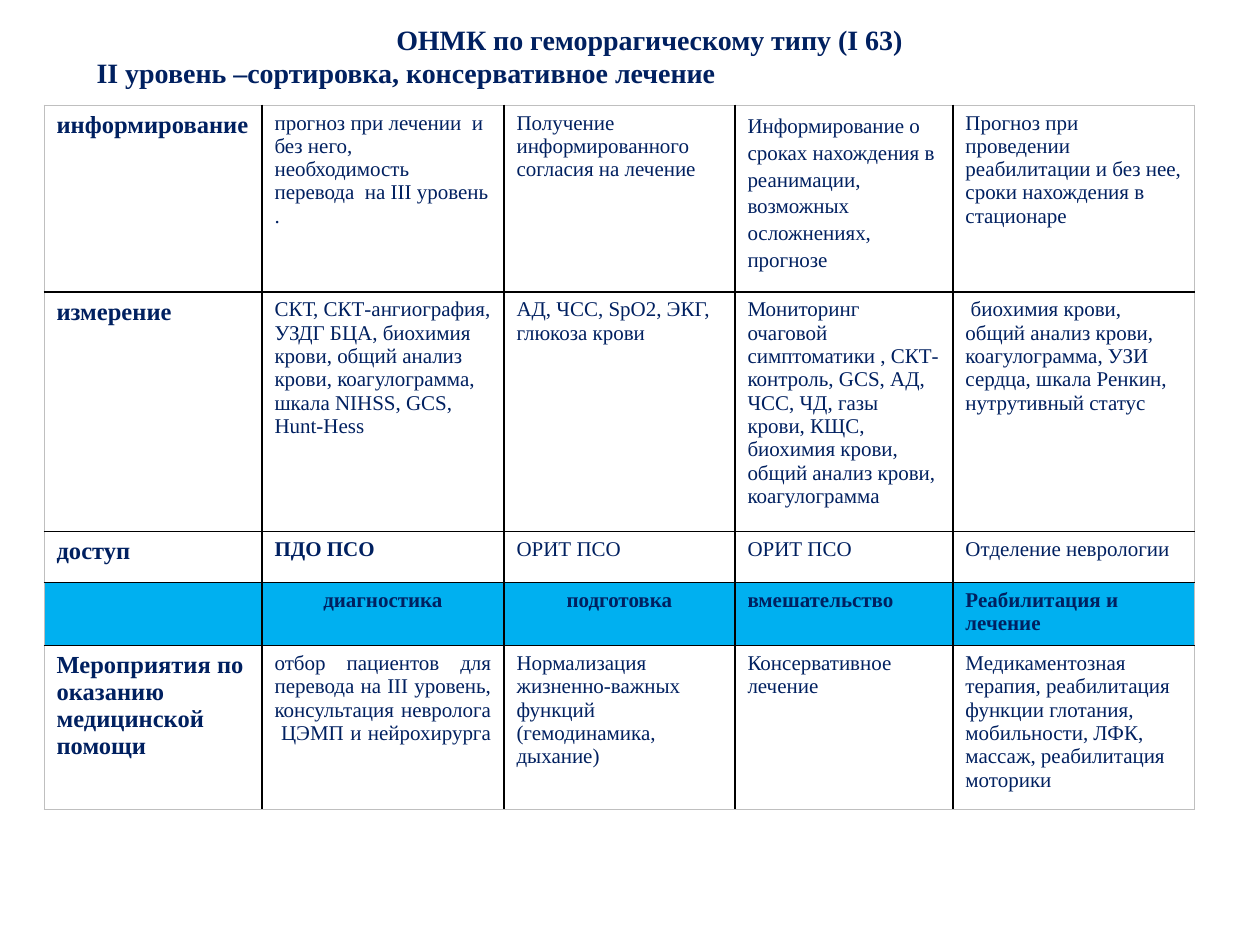
from dataclasses import dataclass

from lxml.etree import SubElement
from pptx import Presentation
from pptx.dml.color import RGBColor
from pptx.enum.text import MSO_ANCHOR, MSO_AUTO_SIZE, PP_ALIGN as Align
from pptx.oxml.ns import qn
from pptx.util import Emu, Pt

PX_PER_INCH = 126


@dataclass(frozen=True)
class Theme:
    font: str = "Times New Roman"
    ink: str = "002060"
    band: str = "00B0F0"
    grid: str = "000000"
    frame: str = "BFBFBF"
    title_size: int = 16
    label_size: int = 14
    body_size: int = 12
    grid_width: float = 1
    frame_width: float = 0.5


@dataclass(frozen=True)
class Entry:
    text: str
    bold: bool = False
    align: Align = Align.LEFT
    line_spacing: float = 1.0
    space_after: int = 0


@dataclass(frozen=True)
class Row:
    height: int
    label: str
    entries: tuple[Entry, ...]
    banded: bool = False


THEME = Theme()
COLUMN_WIDTHS = (218, 242, 231, 218, 242)
TITLE_LINES = (
    ("ОНМК по геморрагическому типу (I 63)", Align.CENTER),
    ("II уровень –сортировка, консервативное лечение", Align.LEFT),
)
ROWS = (
    Row(187, "информирование", (
        Entry("прогноз при лечении  и без него, необходимость перевода  на III уровень ."),
        Entry("Получение информированного согласия на лечение"),
        Entry("Информирование о сроках нахождения в реанимации, возможных осложнениях, прогнозе",
              line_spacing=1.15, space_after=10),
        Entry("Прогноз при проведении реабилитации и без нее, сроки нахождения в стационаре"),
    )),
    Row(239, "измерение", (
        Entry("СКТ, СКТ-ангиография, УЗДГ БЦА, биохимия крови, общий анализ крови, "
              "коагулограмма, шкала NIHSS, GCS, Hunt-Hess"),
        Entry("АД, ЧСС, SpO2, ЭКГ, глюкоза крови"),
        Entry("Мониторинг очаговой симптоматики , СКТ-контроль, GCS, АД, ЧСС, ЧД, газы крови, "
              "КЩС, биохимия крови, общий анализ крови, коагулограмма"),
        Entry(" биохимия крови, общий анализ крови, коагулограмма, УЗИ сердца, шкала Ренкин, "
              "нутрутивный статус"),
    )),
    Row(51, "доступ", (
        Entry("ПДО ПСО", bold=True),
        Entry("ОРИТ ПСО"),
        Entry("ОРИТ ПСО"),
        Entry("Отделение неврологии"),
    )),
    Row(63, "", (
        Entry("диагностика", bold=True, align=Align.CENTER),
        Entry("подготовка", bold=True, align=Align.CENTER),
        Entry("вмешательство", bold=True),
        Entry("Реабилитация и лечение", bold=True),
    ), banded=True),
    Row(164, "Мероприятия по оказанию медицинской помощи", (
        Entry("отбор пациентов для перевода на III уровень, консультация невролога  ЦЭМП "
              "и нейрохирурга ", align=Align.JUSTIFY),
        Entry("Нормализация жизненно-важных функций (гемодинамика, дыхание)"),
        Entry("Консервативное лечение"),
        Entry("Медикаментозная терапия, реабилитация функции глотания, мобильности, ЛФК, "
              "массаж, реабилитация моторики"),
    )),
)


def px(length: int) -> Emu:
    """Turn whole pixels into EMU."""
    return Emu(round(length * 914400 / PX_PER_INCH))


def write(paragraph, text: str, *, size: int, bold: bool = False, align: Align = Align.LEFT,
          line_spacing: float = 1.0, space_after: int = 0) -> None:
    """Put one formatted run into a paragraph."""
    paragraph.alignment = align
    paragraph.line_spacing = line_spacing
    paragraph.space_before = Pt(0)
    paragraph.space_after = Pt(space_after)
    run = paragraph.add_run()
    run.text = text
    run.font.name = THEME.font
    run.font.size = Pt(size)
    run.font.bold = bold
    run.font.color.rgb = RGBColor.from_string(THEME.ink)


def draw_title(slide) -> None:
    """Place the title and write its two lines."""
    title = slide.shapes.title
    title.left, title.top, title.width, title.height = px(84), px(16), px(1131), px(81)
    frame = title.text_frame
    frame.word_wrap = True
    frame.auto_size = MSO_AUTO_SIZE.SHAPE_TO_FIT_TEXT
    frame.vertical_anchor = MSO_ANCHOR.TOP
    for index, (text, align) in enumerate(TITLE_LINES):
        paragraph = frame.add_paragraph() if index else frame.paragraphs[0]
        write(paragraph, text, size=THEME.title_size, bold=True, align=align)


def draw_borders(cell, outer_sides: dict[str, bool]) -> None:
    """Give a cell frame lines on outer sides and grid lines elsewhere."""
    properties = cell._tc.get_or_add_tcPr()
    for side, outer in outer_sides.items():
        width, color = ((THEME.frame_width, THEME.frame) if outer
                        else (THEME.grid_width, THEME.grid))
        line = SubElement(properties, qn(f"a:ln{side}"), w=str(int(Pt(width))))
        fill = SubElement(line, qn("a:solidFill"))
        SubElement(fill, qn("a:srgbClr"), val=color)


def draw_table(slide) -> None:
    """Build the table of care stages."""
    table = slide.shapes.add_table(
        len(ROWS), len(COLUMN_WIDTHS), px(44), px(105),
        px(sum(COLUMN_WIDTHS)), px(sum(row.height for row in ROWS))).table
    table.first_row = table.horz_banding = False
    for column, width in zip(table.columns, COLUMN_WIDTHS):
        column.width = px(width)
    last_row, last_column = len(ROWS) - 1, len(COLUMN_WIDTHS) - 1
    for row_index, row in enumerate(ROWS):
        table.rows[row_index].height = px(row.height)
        for column_index, entry in enumerate((Entry(row.label, bold=True), *row.entries)):
            cell = table.cell(row_index, column_index)
            draw_borders(cell, {"L": column_index == 0, "R": column_index == last_column,
                                "T": row_index == 0, "B": row_index == last_row})
            if row.banded:
                cell.fill.solid()
                cell.fill.fore_color.rgb = RGBColor.from_string(THEME.band)
            else:
                cell.fill.background()
            if entry.text:
                write(cell.text_frame.paragraphs[0], entry.text, bold=entry.bold,
                      size=THEME.body_size if column_index else THEME.label_size,
                      align=entry.align, line_spacing=entry.line_spacing,
                      space_after=entry.space_after)


def main() -> None:
    """Build and save the slide."""
    presentation = Presentation()
    presentation.slide_width, presentation.slide_height = px(1260), px(945)
    slide = presentation.slides.add_slide(presentation.slide_layouts[5])
    draw_title(slide)
    draw_table(slide)
    presentation.save("out.pptx")


if __name__ == "__main__":
    main()
